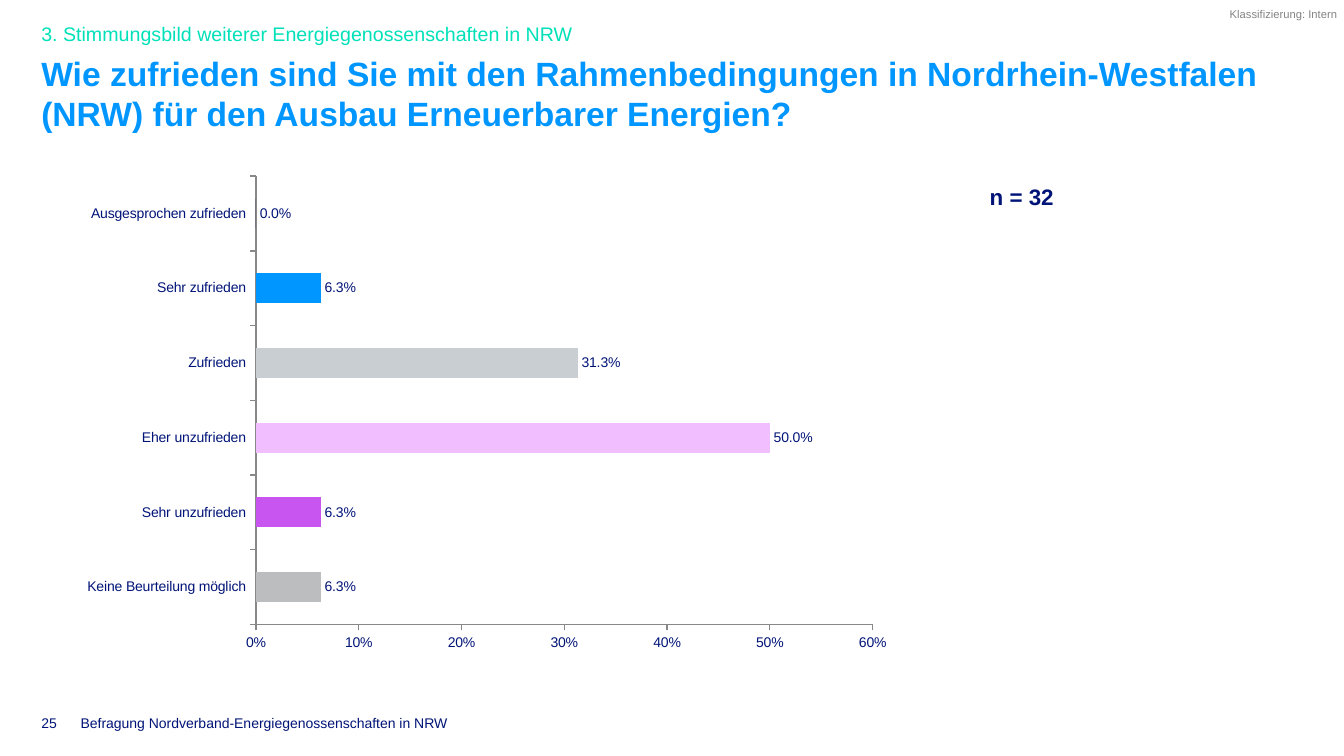
from lxml import etree
from pptx import Presentation
from pptx import util as u
from pptx.chart.data import CategoryChartData
from pptx.dml.color import RGBColor
from pptx.enum import chart as charts, text
from pptx.oxml import parse_xml
from pptx.oxml.ns import nsdecls, qn

COLORS = {
    "navy": "001478",
    "blue": "0096FF",
    "mint": "00E1B9",
    "gray": "838383",
    "axis": "888888",
    "white": "FFFFFF",
}
RATINGS = [
    ("Keine Beurteilung möglich", 0.063, "BCBDBF"),
    ("Sehr unzufrieden", 0.063, "C955F1"),
    ("Eher unzufrieden", 0.5, "F1BEFF"),
    ("Zufrieden", 0.313, "C8CED2"),
    ("Sehr zufrieden", 0.063, "0096FF"),
    ("Ausgesprochen zufrieden", 0, "05004B"),
]
PLOT_AREA = {"x": 0.22, "y": 0.02, "w": 0.74, "h": 0.91}
TOP, BOTTOM = text.MSO_ANCHOR.TOP, text.MSO_ANCHOR.BOTTOM


def rgb(name):
    return RGBColor.from_string(COLORS.get(name, name))


class SlideBuilder:
    def __init__(self, slide, font="Arial"):
        self.slide = slide
        self.font = font

    def style_font(self, font, size, color, bold=False):
        font.name = self.font
        font.size = u.Pt(size)
        font.bold = bold
        font.color.rgb = rgb(color)

    def fill_text(self, shape, box, content, size, color, bold=False, anchor=TOP, wrap=True):
        shape.left, shape.top, shape.width, shape.height = map(u.Pt, box)
        frame = shape.text_frame
        frame.margin_left = frame.margin_top = frame.margin_right = frame.margin_bottom = 0
        frame.auto_size = text.MSO_AUTO_SIZE.NONE
        frame.word_wrap = wrap
        frame.vertical_anchor = anchor
        paragraph = frame.paragraphs[0]
        paragraph.alignment = text.PP_ALIGN.LEFT
        paragraph.space_before = u.Pt(0)
        run = paragraph.add_run()
        run.text = content
        self.style_font(run.font, size, color, bold)
        return paragraph

    def title(self, box, content, size, color):
        self.fill_text(self.slide.shapes.title, box, content, size, color, bold=True)

    def body(self, box, content, size, color):
        paragraph = self.fill_text(
            self.slide.placeholders[1], box, content, size, color, anchor=BOTTOM
        )
        properties = paragraph._p.get_or_add_pPr()
        properties.set("marL", "0")
        properties.set("indent", "0")
        etree.SubElement(properties, qn("a:buNone"))

    def label(self, box, content, size, color, **options):
        shape = self.slide.shapes.add_textbox(*map(u.Pt, box))
        self.fill_text(shape, box, content, size, color, **options)

    def style_axis(self, axis):
        axis.has_major_gridlines = False
        axis.major_tick_mark = charts.XL_TICK_MARK.OUTSIDE
        axis.minor_tick_mark = charts.XL_TICK_MARK.NONE
        axis.format.line.color.rgb = rgb("axis")
        axis.format.line.width = u.Pt(1)
        self.style_font(axis.tick_labels.font, 10, "navy")

    def bar_chart(self, box, ratings):
        data = CategoryChartData(number_format="0.0%")
        data.categories = [name for name, _, _ in ratings]
        data.add_series("Series 1", [value for _, value, _ in ratings])
        chart = self.slide.shapes.add_chart(
            charts.XL_CHART_TYPE.BAR_CLUSTERED, *map(u.Pt, box), data
        ).chart
        chart.has_legend = False
        chart.has_title = False
        self.style_font(chart.font, 10, "navy")

        self.style_axis(chart.category_axis)
        self.style_axis(chart.value_axis)
        chart.value_axis.minimum_scale = 0
        chart.value_axis.maximum_scale = 0.6
        chart.value_axis.major_unit = 0.1
        chart.value_axis.tick_labels.number_format = "0%"
        chart.value_axis.tick_labels.number_format_is_linked = False

        plot = chart.plots[0]
        plot.gap_width = 150
        plot.vary_by_categories = False
        plot.has_data_labels = True
        labels = plot.data_labels
        labels.show_value = True
        labels.number_format = "#0.0%"
        labels.number_format_is_linked = False
        labels.position = charts.XL_LABEL_POSITION.OUTSIDE_END
        self.style_font(labels.font, 10, "navy")

        series = plot.series[0]
        series.invert_if_negative = False
        series.format.fill.solid()
        series.format.fill.fore_color.rgb = rgb(ratings[0][2])
        series.format.line.color.rgb = rgb("white")
        series.format.line.width = u.Pt(2)
        for index, (_, _, color) in enumerate(ratings):
            point = series.points[index].format
            point.fill.solid()
            point.fill.fore_color.rgb = rgb(color)
            point.line.fill.background()
        self.place_plot(chart)

    def place_plot(self, chart):
        area = chart._chartSpace.chart.plotArea
        for layout in area.findall(qn("c:layout")):
            area.remove(layout)
        modes = '<c:xMode val="edge"/><c:yMode val="edge"/>'
        sizes = "".join(f'<c:{key} val="{value}"/>' for key, value in PLOT_AREA.items())
        area.insert(0, parse_xml(
            f'<c:layout {nsdecls("c")}><c:manualLayout><c:layoutTarget val="inner"/>'
            f"{modes}{sizes}</c:manualLayout></c:layout>"
        ))


def main():
    presentation = Presentation()
    presentation.slide_width = u.Pt(960)
    presentation.slide_height = u.Pt(540)
    builder = SlideBuilder(presentation.slides.add_slide(presentation.slide_layouts[1]))

    builder.title(
        (29.5, 37.5, 901.5, 62.6),
        "Wie zufrieden sind Sie mit den Rahmenbedingungen in Nordrhein-Westfalen "
        "(NRW) für den Ausbau Erneuerbarer Energien?",
        24, "blue",
    )
    builder.body(
        (29.5, 12.2, 592.5, 20.2),
        "3. Stimmungsbild weiterer Energiegenossenschaften in NRW", 14, "mint",
    )
    builder.bar_chart((51.8, 118.8, 595.4, 352), RATINGS)
    builder.label((707, 131, 224, 62.6), "n = 32", 16, "navy", bold=True)
    builder.label((878.4, 5, 81.6, 9.4), "Klassifizierung: Intern", 8, "gray", wrap=False)
    builder.label((29.5, 511.2, 17.3, 11.5), "25", 10, "navy", anchor=BOTTOM, wrap=False)
    builder.label(
        (57.6, 511.2, 405.4, 11.5),
        "Befragung Nordverband-Energiegenossenschaften in NRW", 10, "navy",
        anchor=BOTTOM, wrap=False,
    )
    presentation.save("out.pptx")


if __name__ == "__main__":
    main()
